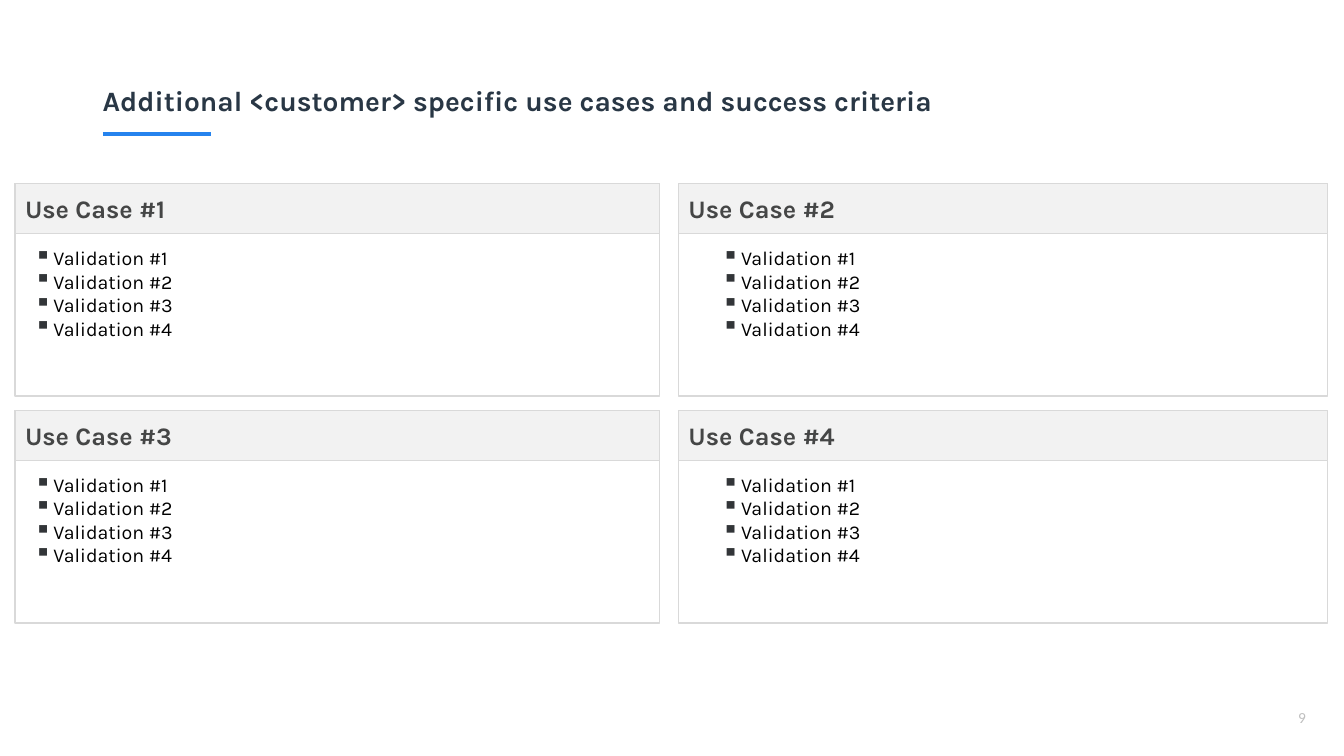
from lxml.etree import SubElement
from pptx import Presentation
from pptx.dml.color import RGBColor
from pptx.enum.shapes import MSO_CONNECTOR, MSO_SHAPE
from pptx.enum.text import MSO_ANCHOR, PP_ALIGN
from pptx.oxml.ns import qn
from pptx.util import Inches, Pt

# Content
TITLE = "Additional <customer> specific use cases and success criteria"
PAGE_NUMBER = "9"
VALIDATIONS = ["Validation #1", "Validation #2", "Validation #3", "Validation #4"]
USE_CASES = [
    ("Use Case #1", VALIDATIONS),
    ("Use Case #2", VALIDATIONS),
    ("Use Case #3", VALIDATIONS),
    ("Use Case #4", VALIDATIONS),
]

# Layout: (card left, card width, list left) per column, card top per row
COLUMNS = [(0.15, 6.39, 0.34), (6.73, 6.44, 7.16)]
ROWS = [1.82, 4.07]
CARD_HEIGHT, HEADER_HEIGHT, LIST_OFFSET = 2.11, 0.5, 0.62
BULLET_INDENT = Inches(0.19)


def color(hex_code):
    return RGBColor.from_string(hex_code)


def style(paragraph, size, hex_code, name="Karla", bold=False):
    font = paragraph.font
    font.name, font.size, font.bold = name, Pt(size), bold
    font.color.rgb = color(hex_code)


def add_text(left, top, width, height):
    box = slide.shapes.add_textbox(Inches(left), Inches(top), Inches(width), Inches(height))
    box.text_frame.word_wrap = True
    return box.text_frame


def add_panel(left, top, width, height, fill):
    panel = slide.shapes.add_shape(
        MSO_SHAPE.RECTANGLE, Inches(left), Inches(top), Inches(width), Inches(height))
    panel.shadow.inherit = False
    panel.fill.solid()
    panel.fill.fore_color.rgb = color(fill)
    panel.line.color.rgb = color("D9D9D9")
    panel.line.width = Pt(1)
    return panel.text_frame


def add_bullet(paragraph):
    properties = paragraph._p.get_or_add_pPr()
    properties.set("marL", str(BULLET_INDENT))
    properties.set("indent", str(-BULLET_INDENT))
    bullet_color = SubElement(properties, qn("a:buClr"))
    SubElement(bullet_color, qn("a:srgbClr"), val="323538")
    SubElement(properties, qn("a:buSzPct"), val="120000")
    SubElement(properties, qn("a:buChar"), char="▪")


presentation = Presentation()
presentation.slide_width, presentation.slide_height = Inches(13.33), Inches(7.5)
slide = presentation.slides.add_slide(presentation.slide_layouts[6])

# Title and its underline
underline = slide.shapes.add_connector(
    MSO_CONNECTOR.STRAIGHT, Inches(1.02), Inches(1.33), Inches(2.09), Inches(1.33))
underline.line.color.rgb = color("2583EE")
underline.line.width = Pt(2.25)
SubElement(underline._element.spPr, qn("a:effectLst"))

title = add_text(0.92, 0.4, 11.5, 0.81)
title.vertical_anchor = MSO_ANCHOR.BOTTOM
title.text = TITLE
title.paragraphs[0].line_spacing = 1.2
style(title.paragraphs[0], 20, "293745", bold=True)

# Use case cards
for index, (use_case, validations) in enumerate(USE_CASES):
    row, column = divmod(index, len(COLUMNS))
    left, width, list_left = COLUMNS[column]
    top = ROWS[row]

    add_panel(left, top, width, CARD_HEIGHT, "FFFFFF")
    header = add_panel(left, top, width, HEADER_HEIGHT, "F2F2F2")
    header.vertical_anchor = MSO_ANCHOR.MIDDLE
    header.text = use_case
    header.paragraphs[0].alignment = PP_ALIGN.LEFT
    style(header.paragraphs[0], 18, "454646", bold=True)

    checklist = add_text(list_left, top + LIST_OFFSET, 5.32, 1.41)
    checklist.margin_left = checklist.margin_right = 0
    checklist.margin_top = checklist.margin_bottom = 0
    checklist.text = "\n".join(validations)
    for paragraph in checklist.paragraphs:
        add_bullet(paragraph)
        style(paragraph, 14, "000000")

# Page number
page = add_text(12.65, 6.94, 0.4, 0.31)
page.text = PAGE_NUMBER
page.paragraphs[0].alignment = PP_ALIGN.RIGHT
page.paragraphs[0].line_spacing = 1.2
style(page.paragraphs[0], 11, "BFBFBF", name="Calibri")

presentation.save("out.pptx")
